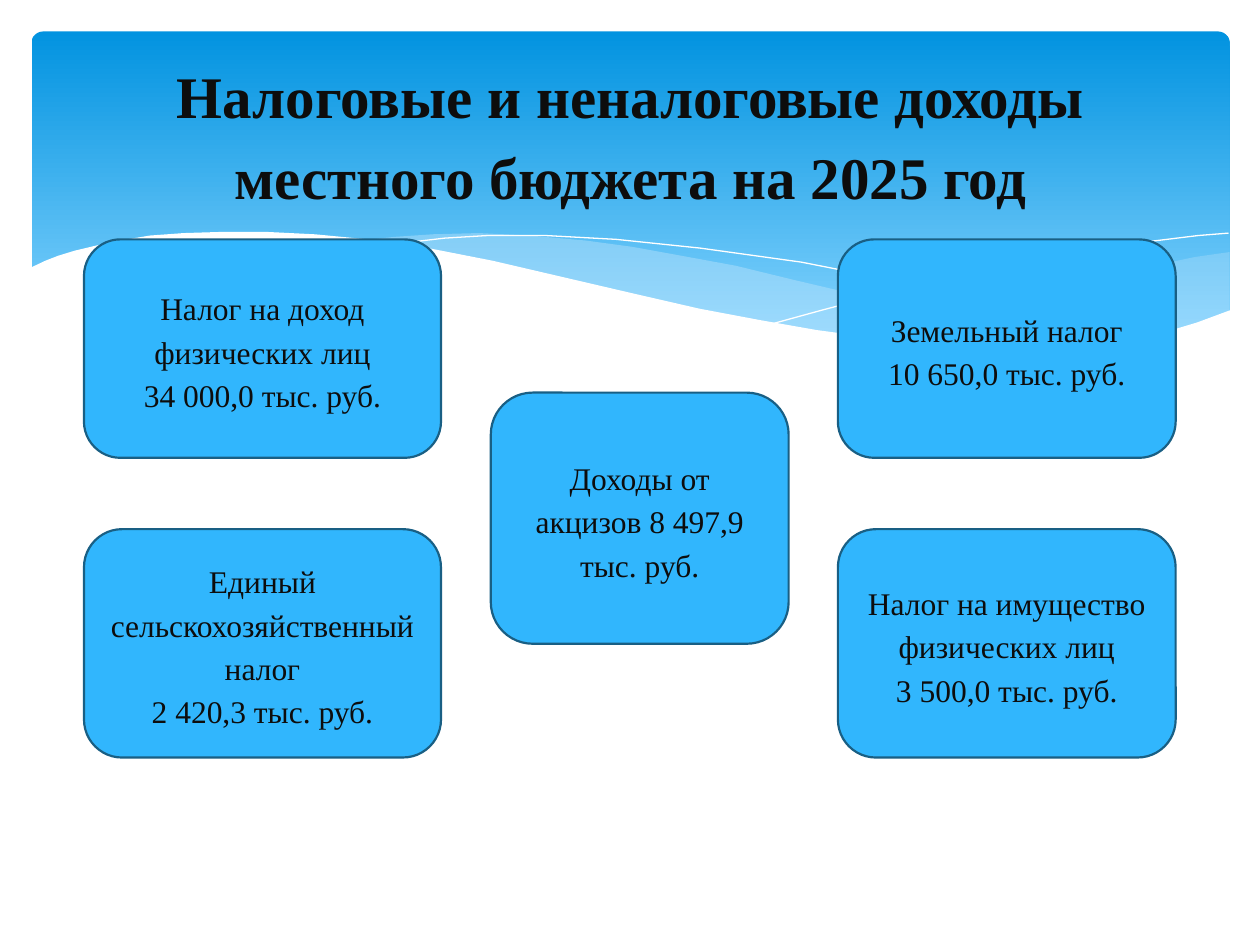
from pptx import Presentation
from pptx.dml.color import RGBColor
from pptx.enum.shapes import MSO_SHAPE as Preset
from pptx.enum.text import MSO_ANCHOR as Anchor, PP_ALIGN as Align
from pptx.oxml.xmlchemy import OxmlElement
from pptx.util import Pt

rgb = RGBColor.from_string

presentation = Presentation()
presentation.slide_width, presentation.slide_height = Pt(720), Pt(540)
slide = presentation.slides.add_slide(presentation.slide_layouts[6])
shapes = slide.shapes


def add_text(shape, text, size=18, color="0D0D0D", bold=False):
    frame = shape.text_frame
    frame.word_wrap = True
    frame.vertical_anchor = Anchor.MIDDLE
    paragraph = frame.paragraphs[0]
    paragraph.text = text
    paragraph.alignment = Align.CENTER
    paragraph.line_spacing = 1.15
    paragraph.space_after = Pt(10)
    for run in paragraph.runs:
        run.font.name = "Times New Roman"
        run.font.size = Pt(size)
        run.font.bold = bold
        run.font.color.rgb = rgb(color)


def add_wave(points, fill=None, opacity=100):
    (start_x, start_y), *rest = [(Pt(x), Pt(y)) for x, y in points]
    builder = shapes.build_freeform(start_x, start_y)
    builder.add_line_segments(rest, close=fill is not None)
    wave = builder.convert_to_shape()
    wave.shadow.inherit = False
    if fill is None:
        wave.fill.background()
        wave.line.color.rgb = rgb("FFFFFF")
        wave.line.width = Pt(0)
        return
    wave.fill.solid()
    wave.fill.fore_color.rgb = rgb(fill)
    wave.line.fill.background()
    if opacity < 100:
        alpha = OxmlElement("a:alpha")
        alpha.set("val", str(opacity * 1000))
        wave.fill._xPr.solidFill.srgbClr.append(alpha)


banner = shapes.add_shape(Preset.ROUNDED_RECTANGLE, Pt(18), Pt(18), Pt(684.7), Pt(194.4))
banner.adjustments[0] = 0.034
banner.shadow.inherit = False
banner.line.fill.background()
banner.fill.gradient()
banner.fill.gradient_angle = 270
for stop, position, color in zip(banner.fill.gradient_stops, (0, 0.9), ("0293E0", "83D3FE")):
    stop.position = position
    stop.color.rgb = rgb(color)

right_band = [
    (702.7, 144), (682.6, 146.9), (652.3, 153.4), (619.9, 160.6), (579.6, 170.6),
    (542.2, 178.6), (508.3, 185), (475.9, 190.8), (497.5, 193.7), (527, 197.3),
    (553.7, 199.4), (586, 200.2), (614.9, 198.7), (640, 195.8), (663, 190.8),
    (683.3, 185), (702.7, 177.8),
]
middle_band = [
    (643, 196.6), (602.6, 190.8), (558, 182.9), (508.3, 172.8), (452.9, 159.8),
    (420.5, 151.9), (389.5, 146.2), (361.4, 141.1), (334.8, 137.5), (302.4, 134.6),
    (273.6, 133.2), (247.7, 133.9), (225.4, 135.4), (205.9, 137.5), (246.2, 143.3),
    (290.9, 151.9), (323.3, 159.8), (381.6, 172.8), (432.7, 183.6), (478.8, 191.5),
    (519.8, 197.3), (556.6, 199.4), (589, 200.2), (617, 199.4),
]
long_curve = [
    (222.5, 140.4), (236.2, 138.2), (254.2, 136.1), (278.6, 134.6), (311.8, 134.6),
    (352.1, 136.8), (400.3, 141.8), (457.9, 149.8), (523.4, 162.7), (572.4, 173.5),
    (625.7, 187.9), (653, 195.8),
]
short_curve = [
    (441.4, 185), (470.2, 177.1), (500.4, 169.2), (538.6, 160.6), (580.3, 151.2),
    (623.5, 143.3), (655.2, 138.2), (684.7, 134.6), (702, 133.2),
]
white_wave = [
    (703.4, 177.1), (684, 184.3), (662.4, 190.8), (639, 195.1), (612, 198),
    (582.5, 199.4), (548, 198), (510, 194.4), (466.6, 188.6), (434.2, 182.9),
    (399.6, 176.4), (362.2, 167.8), (321.8, 158.4), (281.5, 149), (244.8, 141.8),
    (210.2, 136.8), (180, 133.9), (151.9, 132.5), (127.4, 132.5), (105.1, 133.2),
    (85.7, 134.6), (68.4, 137.5), (54.7, 140.4), (42.5, 143.3), (33.1, 146.2),
    (25.9, 149), (16.6, 153.4), (16.6, 236.9), (703.4, 236.9),
]
add_wave(right_band, fill="C6E7FC", opacity=29)
add_wave(middle_band, fill="C6E7FC", opacity=40)
add_wave(long_curve)
add_wave(short_curve)
add_wave(white_wave, fill="FFFFFF")

title = shapes.add_textbox(Pt(36.7), Pt(37.4), Pt(647.3), Pt(74.2))
add_text(title, "Налоговые и неналоговые доходы\vместного бюджета на 2025 год", size=33.7, bold=True)

left_column, right_column = (48, 204), (478.8, 193)
top_row, bottom_row = (136.8, 124.8), (302.4, 130.5)
incomes = [
    (left_column, top_row, "Налог на доход физических лиц\v34 000,0 тыс. руб."),
    (left_column, bottom_row, "Единый сельскохозяйственный налог\v2 420,3 тыс. руб."),
    (right_column, top_row, "Земельный налог\v10 650,0 тыс. руб."),
    (right_column, bottom_row, "Налог на имущество физических лиц\v3 500,0 тыс. руб."),
    ((280.5, 170.2), (224.4, 143.5), "Доходы от акцизов 8 497,9 тыс. руб."),
]
for (left, width), (top, height), text in incomes:
    box = shapes.add_shape(
        Preset.FLOWCHART_ALTERNATE_PROCESS, Pt(left), Pt(top), Pt(width), Pt(height)
    )
    box.shadow.inherit = False
    box.fill.solid()
    box.fill.fore_color.rgb = rgb("31B6FD")
    box.line.color.rgb = rgb("195F84")
    box.line.width = Pt(1.25)
    add_text(box, text)

presentation.save("out.pptx")
